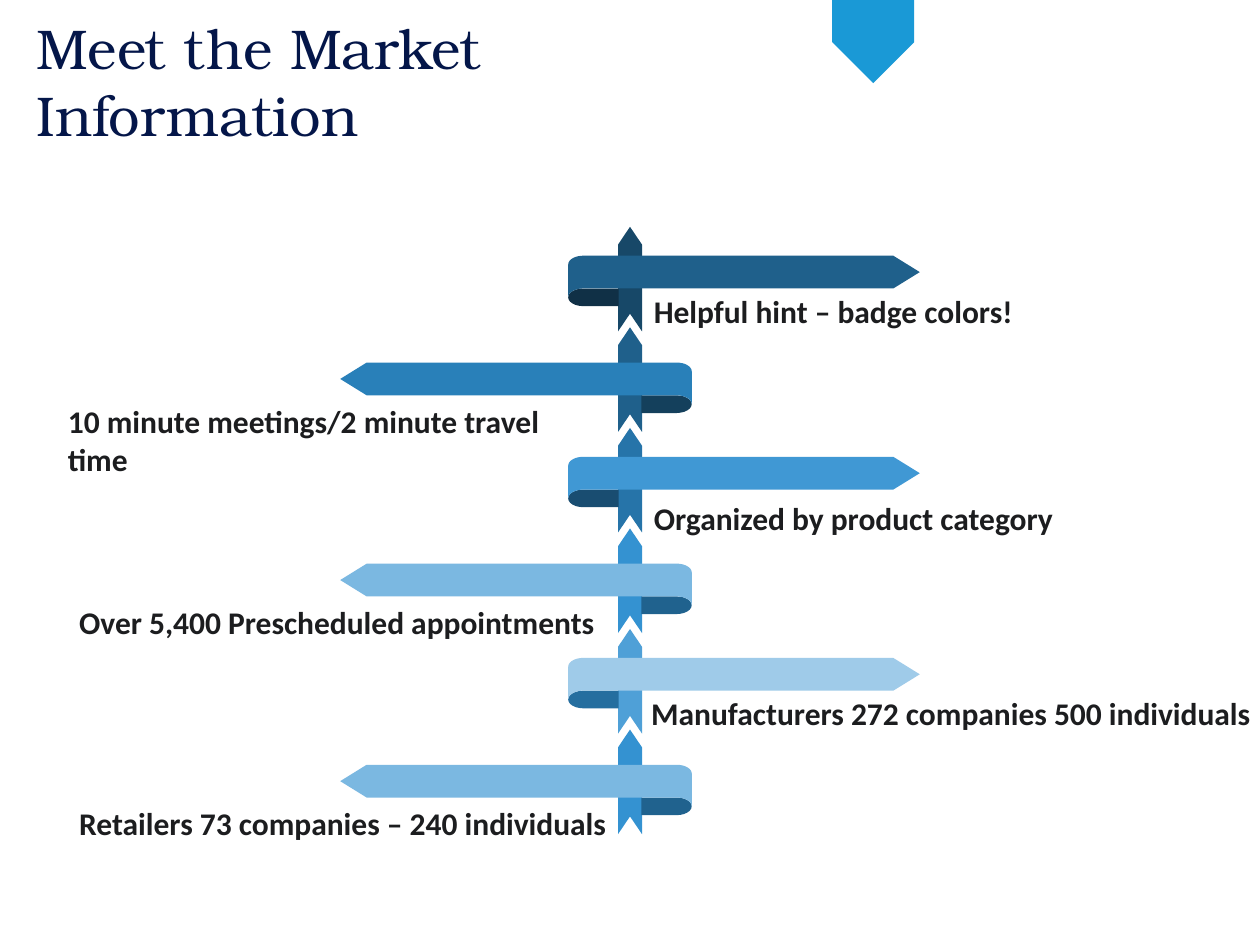
import math
from dataclasses import dataclass

from pptx import Presentation
from pptx.dml.color import RGBColor
from pptx.enum.shapes import MSO_SHAPE
from pptx.util import Inches, Pt

NOTCHED_ARROW = MSO_SHAPE.NOTCHED_RIGHT_ARROW
PENTAGON = MSO_SHAPE.PENTAGON


@dataclass(frozen=True)
class Theme:
    title_font: str = "TeX Gyre Bonum"
    label_font: str = "Calibri"
    title_size: int = 32
    label_size: int = 18
    title_color: str = "041649"
    label_color: str = "1C1D1F"
    marker_color: str = "1A99D6"


THEME = Theme()

# Label, label box (left, top, width), spine, ribbon and fold colours
SIGNS = [
    ("Helpful hint – badge colors!", (5.09, 2.27, 4.38), "174868", "1F608B", "103046"),
    ("10 minute meetings/2 minute travel time", (0.44, 3.14, 4.47), "1F608B", "2980B9", "14405C"),
    ("Organized by product category", (5.09, 3.91, 4.38), "2674A9", "4098D4", "194D71"),
    ("Over 5,400 Prescheduled appointments", (0.53, 4.74, 4.35), "3492D1", "7BB8E1", "20628E"),
    ("Manufacturers 272 companies 500 individuals", (5.07, 5.46, 5.14), "4FA0D7", "9FCBE9", "256E9F"),
    ("Retailers 73 companies – 240 individuals", (0.53, 6.33, 4.68), "3492D1", "7BB8E1", "20628E"),
]
FIRST_TOP, LAST_TOP = 1.8, 5.79
SPINE_CENTER = 5.0
SPINE_LENGTH, SPINE_WIDTH = 0.83, 0.19
RIBBON_REACH = 0.49  # from the spine centre to the folded end
BEND_X, BEND_Y = 0.12, 0.07


def paint(shape, color):
    shape.shadow.inherit = False
    shape.fill.solid()
    shape.fill.fore_color.rgb = RGBColor.from_string(color)
    shape.line.fill.background()


def add_text(slide, text, box, font_name, size, color, bold=False):
    frame = slide.shapes.add_textbox(*map(Inches, box)).text_frame
    frame.word_wrap = True
    frame.text = text
    font = frame.paragraphs[0].runs[0].font
    font.name, font.size, font.bold = font_name, Pt(size), bold
    font.color.rgb = RGBColor.from_string(color)


def add_turned(shapes, kind, center_x, center_y, length, width, rotation, color):
    """Add a preset shape that lies along the vertical axis."""
    shape = shapes.add_shape(kind, Inches(center_x - length / 2), Inches(center_y - width / 2),
                             Inches(length), Inches(width))
    shape.rotation = rotation
    paint(shape, color)
    return shape


def bend(center_y, start, end, steps=12):
    """Points on the elliptical bend, with angles in degrees."""
    angles = [math.radians(start + (end - start) * i / steps) for i in range(steps + 1)]
    return [(BEND_X + BEND_X * math.cos(a), center_y + BEND_Y * math.sin(a)) for a in angles]


def add_outline(shapes, points, left, top, direction, color):
    """Draw points measured from the folded end; direction -1 mirrors them."""
    places = [(Inches(left + direction * x), Inches(top + y)) for x, y in points]
    builder = shapes.build_freeform(*places[0])
    builder.add_line_segments(places[1:], close=True)
    paint(builder.convert_to_shape(), color)


def add_sign(slide, top, direction, spine_color, ribbon_color, fold_color):
    shapes = slide.shapes.add_group_shape().shapes
    spine = add_turned(shapes, NOTCHED_ARROW, SPINE_CENTER, top + SPINE_LENGTH / 2,
                       SPINE_LENGTH, SPINE_WIDTH, 270, spine_color)
    spine.adjustments[0], spine.adjustments[1] = 1, 0.74

    ribbon_top = top + (0.23 if direction > 0 else 0.28)
    folded_end = SPINE_CENTER - direction * RIBBON_REACH
    fold = [(0.4, 0.26), (0.4, 0.4)] + bend(0.33, 90, 270)
    ribbon = ([(2.58, 0), (2.79, 0.13), (2.58, 0.26)]
              + bend(0.33, 270, 180) + bend(BEND_Y, 180, 270))
    add_outline(shapes, fold, folded_end, ribbon_top, direction, fold_color)
    add_outline(shapes, ribbon, folded_end, ribbon_top, direction, ribbon_color)


def add_signpost(slide, first_top, last_top):
    step = (last_top - first_top) / (len(SIGNS) - 1)
    for index, (label, (left, label_top, width), *colors) in enumerate(SIGNS):
        direction = -1 if index % 2 else 1
        add_sign(slide, first_top + index * step, direction, *colors)
        add_text(slide, label, (left, label_top, width, 0.4), THEME.label_font,
                 THEME.label_size, THEME.label_color, bold=True)


def add_header(slide):
    add_text(slide, "Meet the Market Information", (0.19, 0.06, 6.41, 0.64),
             THEME.title_font, THEME.title_size, THEME.title_color)
    add_turned(slide.shapes, PENTAGON, 6.93, 0.33, 0.66, 0.65, 90, THEME.marker_color)


def main():
    presentation = Presentation()
    presentation.slide_width, presentation.slide_height = Inches(10), Inches(7.5)
    slide = presentation.slides.add_slide(presentation.slide_layouts[6])
    add_signpost(slide, FIRST_TOP, LAST_TOP)
    add_header(slide)
    presentation.save("out.pptx")


if __name__ == "__main__":
    main()
